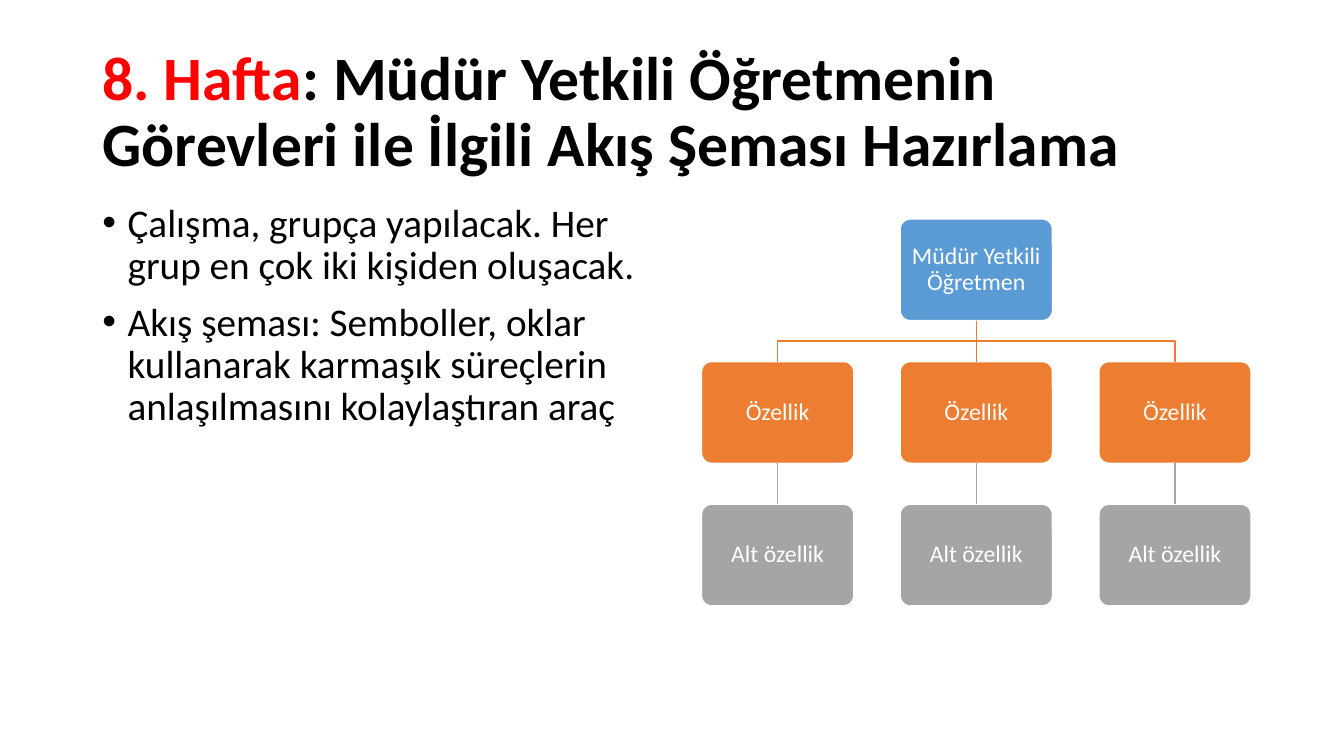
from dataclasses import dataclass

from lxml.etree import SubElement
from pptx import Presentation
from pptx.dml.color import RGBColor
from pptx.enum.shapes import MSO_CONNECTOR, MSO_SHAPE
from pptx.enum.text import MSO_ANCHOR, MSO_AUTO_SIZE, PP_ALIGN
from pptx.oxml.ns import qn
from pptx.shapes.autoshape import Shape
from pptx.slide import Slide
from pptx.text.text import TextFrame, _Paragraph
from pptx.util import Pt

FONT = "Calibri"
COLORS = {
    "red": "FF0000",
    "black": "000000",
    "white": "FFFFFF",
    "blue": "5B9BD5",
    "orange": "ED7D31",
    "gray": "A5A5A5",
}
LEFT, TOP = 501.1, 156.4
WIDTH, HEIGHT = 108.8, 72.6
STEP_X, STEP_Y = 141.9, 101.9


@dataclass(frozen=True)
class Node:
    text: str
    color: str
    col: int
    row: int


HEAD = Node("Müdür Yetkili Öğretmen", "blue", 1, 0)
TRAITS = [Node("Özellik", "orange", col, 1) for col in range(3)]
SUBS = [Node("Alt özellik", "gray", col, 2) for col in range(3)]
POINTS = [
    "Çalışma, grupça yapılacak. Her grup en çok iki kişiden oluşacak.",
    "Akış şeması: Semboller, oklar kullanarak karmaşık süreçlerin "
    "anlaşılmasını kolaylaştıran araç",
]


def paint(name: str) -> RGBColor:
    return RGBColor.from_string(COLORS[name])


def add_run(para: _Paragraph, text: str, size: float, color: str, bold: bool = False) -> None:
    run = para.add_run()
    run.text = text
    run.font.name = FONT
    run.font.size = Pt(size)
    run.font.bold = bold
    run.font.color.rgb = paint(color)


def place(shape: Shape, left: float, top: float, width: float, height: float) -> TextFrame:
    shape.left, shape.top = Pt(left), Pt(top)
    shape.width, shape.height = Pt(width), Pt(height)
    frame = shape.text_frame
    frame.word_wrap = True
    frame.auto_size = MSO_AUTO_SIZE.NONE
    return frame


def add_title(slide: Slide) -> None:
    frame = place(slide.shapes.title, 66, 28.75, 828, 104.4)
    frame.vertical_anchor = MSO_ANCHOR.MIDDLE
    para = frame.paragraphs[0]
    para.alignment = PP_ALIGN.LEFT
    para.line_spacing = 0.9
    add_run(para, "8. Hafta", 44, "red", True)
    add_run(para, ": Müdür Yetkili Öğretmenin Görevleri ile İlgili Akış Şeması Hazırlama",
            44, "black", True)


def add_list(slide: Slide) -> None:
    frame = place(slide.placeholders[1], 66, 141.8, 408, 342.7)
    frame.vertical_anchor = MSO_ANCHOR.TOP
    for i, text in enumerate(POINTS):
        para = frame.add_paragraph() if i else frame.paragraphs[0]
        props = para._p.get_or_add_pPr()
        props.set("marL", str(Pt(18)))
        props.set("indent", str(Pt(-18)))
        SubElement(props, qn("a:buFont"), typeface="Arial")
        SubElement(props, qn("a:buChar"), char="•")
        para.line_spacing = 0.9
        para.space_before = Pt(10 if i else 0)
        add_run(para, text, 28, "black")


def add_node(slide: Slide, node: Node) -> Shape:
    box = slide.shapes.add_shape(
        MSO_SHAPE.ROUNDED_RECTANGLE,
        Pt(LEFT + node.col * STEP_X), Pt(TOP + node.row * STEP_Y), Pt(WIDTH), Pt(HEIGHT))
    box.adjustments[0] = 0.1
    box.shadow.inherit = False
    box.fill.solid()
    box.fill.fore_color.rgb = paint(node.color)
    box.line.color.rgb = paint("white")
    box.line.width = Pt(1)
    frame = box.text_frame
    frame.word_wrap = True
    frame.vertical_anchor = MSO_ANCHOR.MIDDLE
    frame.margin_left = frame.margin_right = Pt(4.5)
    frame.margin_top = frame.margin_bottom = Pt(4.5)
    para = frame.paragraphs[0]
    para.alignment = PP_ALIGN.CENTER
    para.line_spacing = 0.9
    add_run(para, node.text, 17, "white")
    return box


def join(slide: Slide, upper: Shape, lower: Shape, color: str) -> None:
    link = slide.shapes.add_connector(MSO_CONNECTOR.STRAIGHT, 0, 0, 0, 0)
    link.begin_connect(upper, 2)
    link.end_connect(lower, 0)
    link.line.color.rgb = paint(color)
    link.line.width = Pt(1)
    SubElement(link._element.spPr, qn("a:effectLst"))


def branch(slide: Slide, upper: Shape, lower: Shape, color: str) -> None:
    """Draw a stepped line that leaves the upper box downwards and turns halfway."""
    start = upper.left + upper.width // 2
    end = lower.left + lower.width // 2
    base = upper.top + upper.height
    mid = (base + lower.top) // 2
    pen = slide.shapes.build_freeform(start, base)
    pen.add_line_segments([(start, mid), (end, mid), (end, lower.top)], close=False)
    line = pen.convert_to_shape()
    line.shadow.inherit = False
    line.fill.background()
    line.line.color.rgb = paint(color)
    line.line.width = Pt(1)


def add_chart(slide: Slide) -> None:
    head = add_node(slide, HEAD)
    for trait, sub in zip(TRAITS, SUBS):
        upper, lower = add_node(slide, trait), add_node(slide, sub)
        link = join if trait.col == HEAD.col else branch
        link(slide, head, upper, trait.color)
        join(slide, upper, lower, sub.color)


def main() -> None:
    deck = Presentation()
    deck.slide_width, deck.slide_height = Pt(960), Pt(540)
    slide = deck.slides.add_slide(deck.slide_layouts[1])
    add_title(slide)
    add_list(slide)
    add_chart(slide)
    deck.save("out.pptx")


if __name__ == "__main__":
    main()
